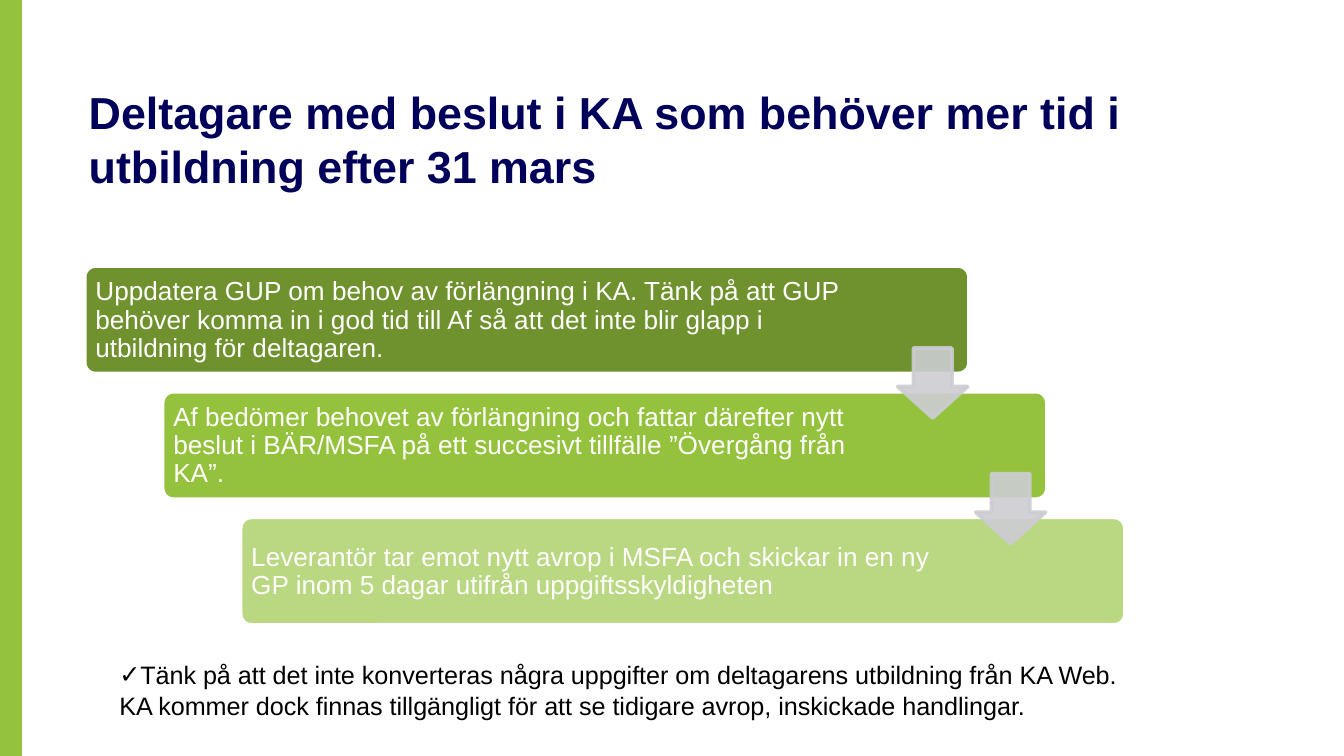
from lxml import etree
from pptx import Presentation
from pptx.dml.color import RGBColor
from pptx.enum.shapes import MSO_SHAPE
from pptx.enum.text import MSO_ANCHOR, MSO_AUTO_SIZE
from pptx.oxml.ns import qn
from pptx.util import Inches, Pt

RECTANGLE = MSO_SHAPE.RECTANGLE
ROUNDED = MSO_SHAPE.ROUNDED_RECTANGLE
DOWN_ARROW = MSO_SHAPE.DOWN_ARROW
TOP = MSO_ANCHOR.TOP
MIDDLE = MSO_ANCHOR.MIDDLE
FIXED = MSO_AUTO_SIZE.NONE
GROW = MSO_AUTO_SIZE.SHAPE_TO_FIT_TEXT

GREEN = "95C23D"
WHITE = "FFFFFF"
NAVY = "00005A"
BLACK = "000000"
GREY = "CCCCD2"

STEPS = [
    ("Uppdatera GUP om behov av förlängning i KA. Tänk på att GUP behöver komma in "
     "i god tid till Af så att det inte blir glapp i utbildning för deltagaren.",
     "70922E", 5.71),
    ("Af bedömer behovet av förlängning och fattar därefter nytt beslut i BÄR/MSFA "
     "på ett succesivt tillfälle ”Övergång från KA”.", GREEN, 5.43),
    ("Leverantör tar emot nytt avrop i MSFA och skickar in en ny GP inom 5 dagar "
     "utifrån uppgiftsskyldigheten", "BAD781", 5.43),
]


def color(value):
    return RGBColor.from_string(value)


def add_box(slide, kind, left, top, width, height, fill, line, line_width=2,
            adjustments=(), opacity=None):
    shape = slide.shapes.add_shape(
        kind, Inches(left), Inches(top), Inches(width), Inches(height))
    shape.shadow.inherit = False
    for index, value in enumerate(adjustments):
        shape.adjustments[index] = value
    shape.fill.solid()
    shape.fill.fore_color.rgb = color(fill)
    shape.line.color.rgb = color(line)
    shape.line.width = Pt(line_width)
    if opacity is not None:
        for element in shape.element.spPr.iter(qn("a:srgbClr")):
            etree.SubElement(element, qn("a:alpha"), val=str(opacity * 1000))
    return shape


def add_text(slide, text, left, top, width, height, size, font_color, bold=False,
             anchor=TOP, inset=(0, 0), spacing=1.0, bullet=None, fit=FIXED):
    shape = slide.shapes.add_textbox(
        Inches(left), Inches(top), Inches(width), Inches(height))
    frame = shape.text_frame
    frame.word_wrap = True
    frame.auto_size = fit
    frame.vertical_anchor = anchor
    frame.margin_left = frame.margin_right = Inches(inset[0])
    frame.margin_top = frame.margin_bottom = Inches(inset[1])
    paragraph = frame.paragraphs[0]
    paragraph.line_spacing = spacing
    if bullet:
        properties = paragraph._p.get_or_add_pPr()
        etree.SubElement(properties, qn("a:buFont"), typeface="Arial")
        etree.SubElement(properties, qn("a:buChar"), char=bullet)
    run = paragraph.add_run()
    run.text = text
    run.font.name = "Arial"
    run.font.size = Pt(size)
    run.font.bold = bold
    run.font.color.rgb = color(font_color)
    return shape


def add_staircase(slide, left, top, width, height):
    step_x, step_y = 0.58, 0.935
    box_width = width - step_x * (len(STEPS) - 1)
    box_height = height - step_y * (len(STEPS) - 1)
    arrow_size = 0.52
    for index, (text, fill, text_width) in enumerate(STEPS):
        x, y = left + index * step_x, top + index * step_y
        add_box(slide, ROUNDED, x, y, box_width, box_height, fill, WHITE,
                adjustments=(0.1,))
        add_text(slide, text, x + 0.02, y + 0.03, text_width, box_height - 0.05,
                 14, WHITE, anchor=MIDDLE, inset=(0.06, 0.06), spacing=0.9)
    for index in range(len(STEPS) - 1):
        x = left + index * step_x + box_width - arrow_size - 0.01
        y = top + index * step_y + 0.61
        add_box(slide, DOWN_ARROW, x, y, arrow_size, arrow_size, GREY, GREY,
                adjustments=(0.55, 0.45), opacity=90)


def build_slide(presentation):
    slide = presentation.slides.add_slide(presentation.slide_layouts[6])
    add_box(slide, RECTANGLE, 0, 0, 0.16, 5.63, GREEN, GREEN, line_width=1)
    add_text(slide,
             "Deltagare med beslut i KA som behöver mer tid i utbildning efter 31 mars",
             0.66, 0.63, 8.12, 0.74, 24, NAVY, bold=True)
    add_staircase(slide, 0.63, 1.98, 7.74, 2.67)
    add_text(slide,
             "Tänk på att det inte konverteras några uppgifter om deltagarens utbildning "
             "från KA Web. KA kommer dock finnas tillgängligt för att se tidigare avrop, "
             "inskickade handlingar.",
             0.79, 4.86, 7.66, 0.56, 13.5, BLACK, inset=(0.1, 0.05),
             bullet="✓", fit=GROW)


def main():
    presentation = Presentation()
    presentation.slide_width = Inches(10)
    presentation.slide_height = presentation.slide_width * 9 // 16
    build_slide(presentation)
    presentation.save("out.pptx")


if __name__ == "__main__":
    main()
